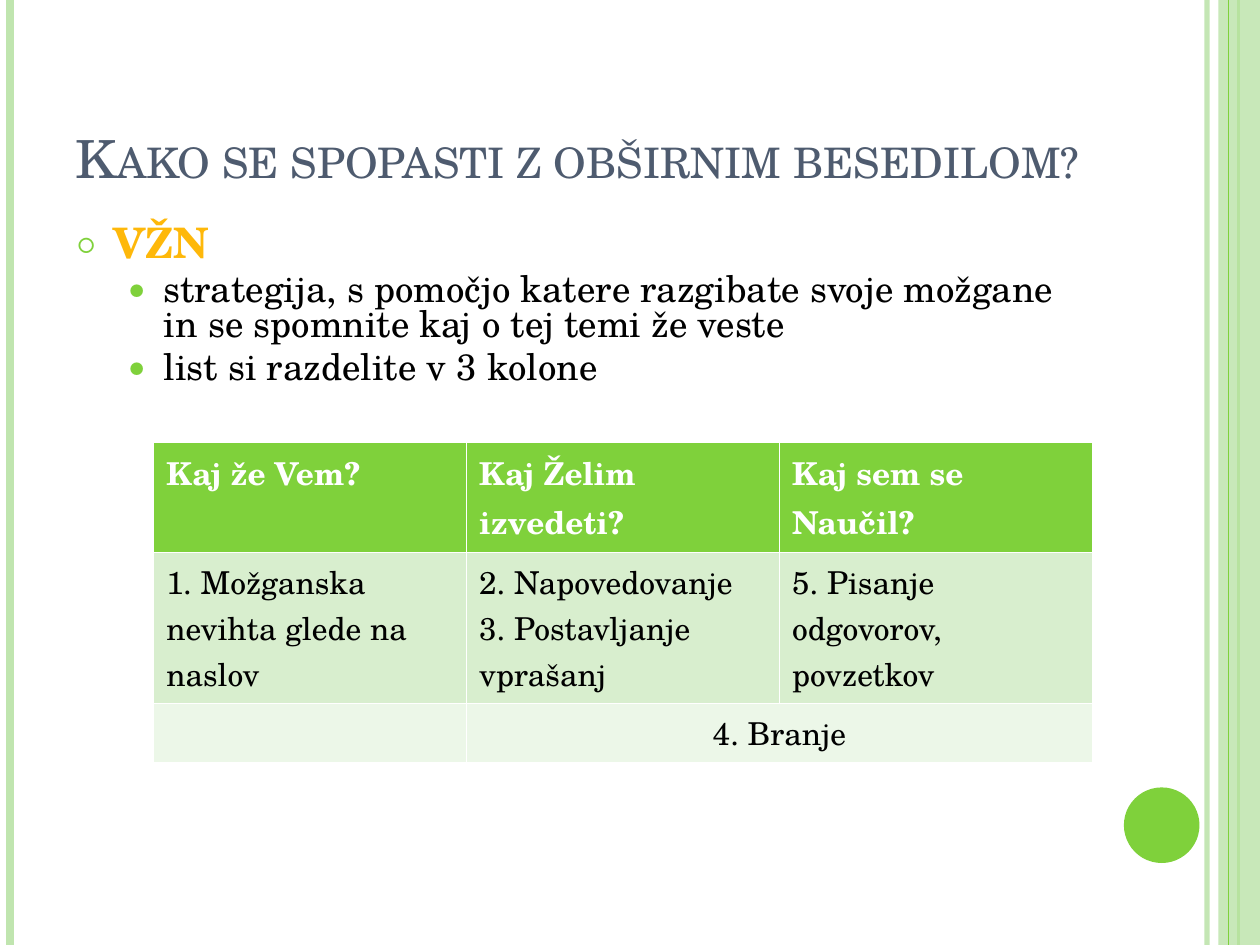
from typing import NamedTuple

from lxml.etree import SubElement
from pptx import Presentation
from pptx.dml.color import RGBColor
from pptx.enum.shapes import MSO_CONNECTOR as Connector, MSO_SHAPE as Shape
from pptx.enum.text import MSO_ANCHOR as Anchor, PP_ALIGN as Align
from pptx.oxml.ns import qn
from pptx.util import Inches, Pt

WIDTH, HEIGHT = Inches(10), Inches(7.5)
FONT = "TeX Gyre Schola"
GREEN, PALE, WHITE, BLACK = "7FD13B", "C0E5AF", "FFFFFF", "000000"


class Stripe(NamedTuple):
    x: float  # share of the slide's width
    color: str
    points: float
    opacity: int = 100


class Bullet(NamedTuple):
    text: str
    level: int
    size: int
    color: str
    bold: bool
    space_before: float
    indent: float
    mark: str
    mark_percent: int


class Cell(NamedTuple):
    row: int
    column: int
    lines: tuple[str, ...] = ()
    align: Align = Align.LEFT


STRIPES = [
    Stripe(0.958, PALE, 3, 93),
    Stripe(0.008, PALE, 4.5),
    Stripe(0.983, GREEN, 1.5),
    Stripe(0.975, GREEN, 0.75),
]
BULLETS = [
    Bullet("VŽN", 0, 24, "FEB80A", True, 6, 0.3, "○", 70),
    *(Bullet(text, 1, 21, BLACK, False, 4.2, 0.7, "●", 80) for text in (
        "strategija, s pomočjo katere razgibate svoje možgane "
        "in se spomnite kaj o tej temi že veste",
        "list si razdelite v 3 kolone",
    )),
]
ROW_FILLS = [GREEN, "D8EECE", "ECF7E8"]
CELLS = [
    Cell(0, 0, ("Kaj že Vem?",)),
    Cell(0, 1, ("Kaj Želim izvedeti?",)),
    Cell(0, 2, ("Kaj sem se Naučil?",)),
    Cell(1, 0, ("1. Možganska nevihta glede na naslov",)),
    Cell(1, 1, ("2. Napovedovanje", "3. Postavljanje vprašanj")),
    Cell(1, 2, ("5. Pisanje odgovorov, povzetkov",)),
    Cell(2, 0),
    Cell(2, 1, ("4. Branje",), Align.CENTER),
]


def rgb(color: str) -> RGBColor:
    return RGBColor.from_string(color)


def place(shape, x: float, y: float, w: float, h: float) -> None:
    """Place a shape by shares of the slide's size."""
    shape.left, shape.top = round(x * WIDTH), round(y * HEIGHT)
    shape.width, shape.height = round(w * WIDTH), round(h * HEIGHT)


def set_opacity(shape, percent: int) -> None:
    for color in shape._element.spPr.iter(qn("a:srgbClr")):
        SubElement(color, qn("a:alpha"), val=str(percent * 1000))


def add_run(paragraph, text: str, size: int, color: str, bold=False):
    run = paragraph.add_run()
    run.text = text
    run.font.name, run.font.size, run.font.bold = FONT, Pt(size), bold
    run.font.color.rgb = rgb(color)
    return run


def add_stripe(slide, stripe: Stripe) -> None:
    x = round(stripe.x * WIDTH)
    line = slide.shapes.add_connector(Connector.STRAIGHT, x, 0, x, HEIGHT)
    line.line.color.rgb = rgb(stripe.color)
    line.line.width = Pt(stripe.points)
    if stripe.opacity < 100:
        set_opacity(line, stripe.opacity)
    SubElement(line._element.spPr, qn("a:effectLst"))


def add_plain_shape(slide, kind: Shape, color: str, *box: float):
    shape = slide.shapes.add_shape(kind, 0, 0, 0, 0)
    place(shape, *box)
    shape.shadow.inherit = False
    shape.fill.solid()
    shape.fill.fore_color.rgb = rgb(color)
    shape.line.fill.background()
    return shape


def write_bullet(paragraph, bullet: Bullet) -> None:
    paragraph.level = bullet.level
    paragraph.line_spacing = 0.8
    paragraph.space_before = Pt(bullet.space_before)
    props = paragraph._p.get_or_add_pPr()
    props.set("marL", str(Inches(bullet.indent)))
    props.set("indent", str(-Inches(0.3)))
    SubElement(SubElement(props, qn("a:buClr")), qn("a:srgbClr"), val=GREEN)
    SubElement(props, qn("a:buSzPct"), val=str(bullet.mark_percent * 1000))
    SubElement(props, qn("a:buFont"), typeface=FONT)
    SubElement(props, qn("a:buChar"), char=bullet.mark)
    add_run(paragraph, bullet.text, bullet.size, bullet.color, bullet.bold)


def write_cell(table, cell: Cell) -> None:
    target = table.cell(cell.row, cell.column)
    target.fill.solid()
    target.fill.fore_color.rgb = rgb(ROW_FILLS[cell.row])
    header = cell.row == 0
    for index, text in enumerate(cell.lines):
        frame = target.text_frame
        paragraph = frame.add_paragraph() if index else frame.paragraphs[0]
        paragraph.alignment = cell.align
        add_run(paragraph, text, 18, WHITE if header else BLACK, header)


def main() -> None:
    deck = Presentation()
    deck.slide_width, deck.slide_height = WIDTH, HEIGHT
    slide = deck.slides.add_slide(deck.slide_layouts[1])
    heading, strategy = slide.placeholders

    # Side decoration
    for stripe in STRIPES[:3]:
        add_stripe(slide, stripe)
    band = add_plain_shape(slide, Shape.RECTANGLE, PALE, 0.967, 0, 0.033, 1)
    set_opacity(band, 87)
    add_stripe(slide, STRIPES[3])
    add_plain_shape(slide, Shape.OVAL, GREEN, 0.892, 0.8333, 0.06, 0.08)

    # Title in small capitals
    place(heading, 0.05, 0.04, 0.836, 0.1667)
    heading.text_frame.vertical_anchor = Anchor.BOTTOM
    title = heading.text_frame.paragraphs[0]
    title.alignment = Align.LEFT
    title_run = add_run(title, "Kako se spopasti z obširnim besedilom?", 30, "4E5B6F")
    title_run.font._element.set("cap", "small")

    # Strategy list
    place(strategy, 0.05, 0.2333, 0.817, 0.71)
    for index, bullet in enumerate(BULLETS):
        frame = strategy.text_frame
        write_bullet(frame.add_paragraph() if index else frame.paragraphs[0], bullet)

    # Three-column table
    columns = rows = 3
    table = slide.shapes.add_table(
        rows, columns, Inches(1.22), Inches(3.51),
        Inches(7.45), Inches(0.41) * rows).table
    table.cell(2, 1).merge(table.cell(2, 2))
    for cell in CELLS:
        write_cell(table, cell)

    deck.save("out.pptx")


if __name__ == "__main__":
    main()
